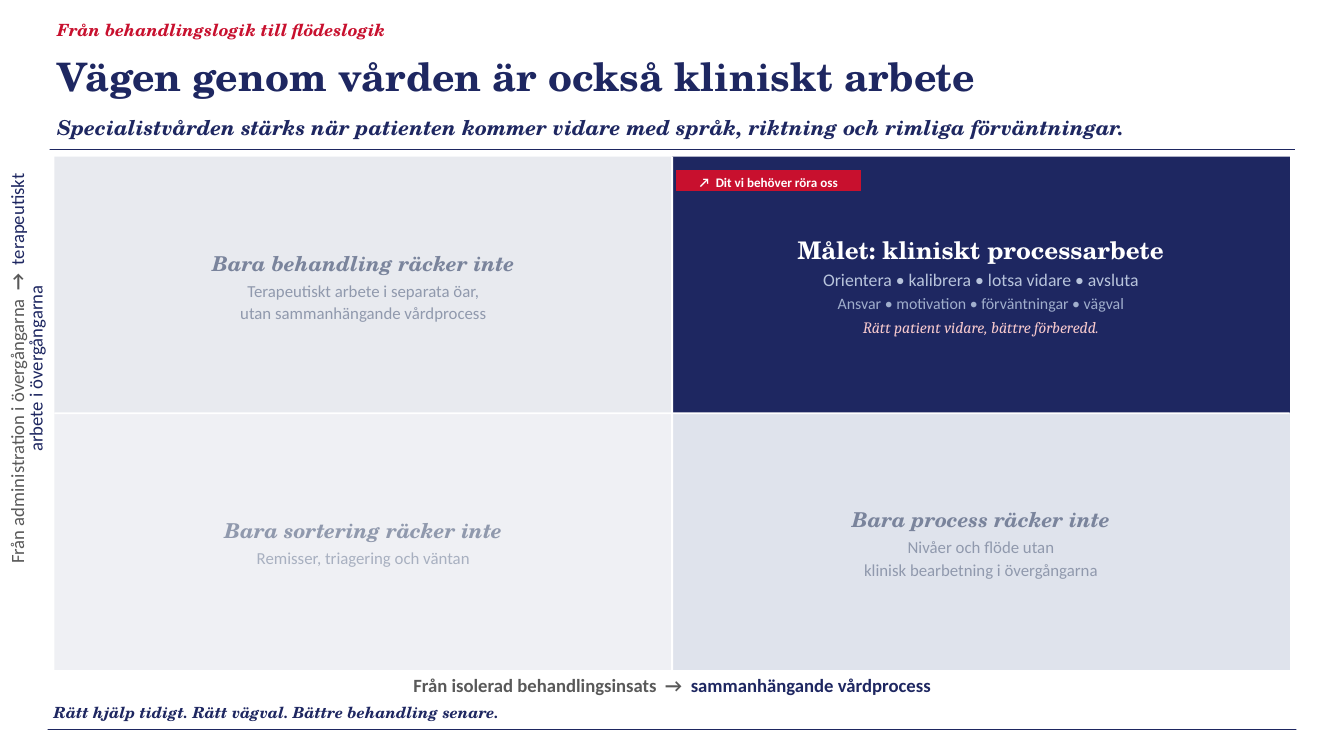
from pptx import Presentation
from pptx.dml.color import RGBColor
from pptx.enum.shapes import MSO_SHAPE
from pptx.enum.text import MSO_ANCHOR, MSO_AUTO_SIZE, PP_ALIGN
from pptx.util import Pt

RECTANGLE = MSO_SHAPE.RECTANGLE
TOP, MIDDLE = MSO_ANCHOR.TOP, MSO_ANCHOR.MIDDLE
LEFT, CENTER = PP_ALIGN.LEFT, PP_ALIGN.CENTER
SERIF, SANS, ACCENT_SERIF = "TeX Gyre Schola", "Calibri", "Cambria"

COLORS = {
    "navy": "1E2761", "red": "C8102E", "white": "FFFFFF", "gray": "595959",
    "quiet": "E8EAEF", "quietest": "EFF0F4", "cool": "DFE3EC",
    "slate": "7A849C", "slate light": "9099AD", "slate pale": "A8B0C0",
    "ice": "B8C4DC", "ice dim": "A0AECC", "rose": "F5C8CC",
}


def style(size, color, name=SANS, bold=False, italic=False):
    return {"size": Pt(size), "color": color, "name": name,
            "bold": bold, "italic": italic}


def line(text, text_style, spacing, before=0):
    return [(text, text_style)], spacing, before


def muted_quadrant(heading, body, heading_color, body_color):
    heading_style = style(22, heading_color, SERIF, True, True)
    return [line(heading, heading_style, 30)] + [
        line(text, style(18, body_color), 24, 0 if index else 3)
        for index, text in enumerate(body)]


# Content: headings as (left, top, width, height), line
TITLE = ((61.2, 56.2, 1318.3, 61.9),
         line("Vägen genom vården är också kliniskt arbete",
              style(42, "navy", SERIF, True), 50))
HEADINGS = [
    ((61.2, 22.3, 1318.3, 25.9),
     line("Från behandlingslogik till flödeslogik",
          style(18, "red", SERIF, True, True), 20)),
    ((61.2, 121.7, 1318.3, 33.8),
     line("Specialistvården stärks när patienten kommer vidare med språk, "
          "riktning och rimliga förväntningar.",
          style(22, "navy", SERIF, True, True), 28)),
    ((57.6, 753.8, 1296, 31.7),
     line("Rätt hjälp tidigt. Rätt vägval. Bättre behandling senare.",
          style(16.5, "navy", SERIF, True, True), 19.8)),
]
RULES = [(53.3, 159.9, 1334.2, 0.72), (51.1, 781.2, 1337.8, 0.72)]

# Quadrants: column, row, fill, lines
QUADRANTS = [
    (0, 0, "quiet", muted_quadrant(
        "Bara behandling räcker inte",
        ["Terapeutiskt arbete i separata öar,", "utan sammanhängande vårdprocess"],
        "slate", "slate light")),
    (0, 1, "quietest", muted_quadrant(
        "Bara sortering räcker inte", ["Remisser, triagering och väntan"],
        "slate light", "slate pale")),
    (1, 0, "navy", [
        line("Målet: kliniskt processarbete",
             style(26, "white", SERIF, True), 33.6),
        line("Orientera • kalibrera • lotsa vidare • avsluta",
             style(19, "ice"), 24, 3.6),
        line("Ansvar • motivation • förväntningar • vägval",
             style(17, "ice dim"), 22, 2),
        line("Rätt patient vidare, bättre förberedd.",
             style(17, "rose", ACCENT_SERIF, italic=True), 22, 3.6)]),
    (1, 1, "cool", muted_quadrant(
        "Bara process räcker inte",
        ["Nivåer och flöde utan", "klinisk bearbetning i övergångarna"],
        "slate", "slate light")),
]
BADGE = line("↗  Dit vi behöver röra oss", style(14, "white", bold=True), 19.8)
HORIZONTAL_AXIS = ([
    ("Från isolerad behandlingsinsats  →  ", style(20, "gray", bold=True)),
    ("sammanhängande vårdprocess", style(20, "navy", bold=True))], 19.8, 0)
VERTICAL_AXIS = ([
    ("Från administration i övergångarna", style(20, "gray")),
    ("  →  ", style(20, "gray", bold=True)),
    ("terapeutiskt arbete i övergångarna", style(20, "navy"))], 19.8, 0)

# Matrix geometry
MATRIX_LEFT, MATRIX_TOP = 58.3, 167.8
CELL_WIDTH, CELL_HEIGHT = 661.8, 275
PAD_X, PAD_Y, GAP = 22, 22, 2
BADGE_BOX = (724.3, 182.2, 198, 22.3)

presentation = Presentation()
presentation.slide_width, presentation.slide_height = Pt(1440), Pt(810)
slide = presentation.slides.add_slide(presentation.slide_layouts[5])


def add_rectangle(box, color):
    shape = slide.shapes.add_shape(RECTANGLE, *map(Pt, box))
    shape.shadow.inherit = False
    shape.fill.solid()
    shape.fill.fore_color.rgb = RGBColor.from_string(COLORS[color])
    shape.line.fill.background()


def fill_text(shape, lines, align=LEFT, anchor=TOP):
    frame = shape.text_frame
    frame_format = {"word_wrap": True, "auto_size": MSO_AUTO_SIZE.NONE,
                    "vertical_anchor": anchor, "margin_left": 0,
                    "margin_top": 0, "margin_right": 0, "margin_bottom": 0}
    for key, value in frame_format.items():
        setattr(frame, key, value)
    for index, (runs, spacing, before) in enumerate(lines):
        paragraph = frame.add_paragraph() if index else frame.paragraphs[0]
        paragraph_format = {"alignment": align, "line_spacing": Pt(spacing),
                            "space_before": Pt(before), "space_after": Pt(0)}
        for key, value in paragraph_format.items():
            setattr(paragraph, key, value)
        for text, text_style in runs:
            run = paragraph.add_run()
            run.text = text
            for key, value in text_style.items():
                if key == "color":
                    run.font.color.rgb = RGBColor.from_string(COLORS[value])
                else:
                    setattr(run.font, key, value)


def add_text(box, lines, align=LEFT, anchor=TOP):
    shape = slide.shapes.add_textbox(*map(Pt, box))
    fill_text(shape, lines, align, anchor)
    return shape


# Title, headings and rules
title = slide.shapes.title
title.left, title.top, title.width, title.height = map(Pt, TITLE[0])
fill_text(title, [TITLE[1]])
for box, heading in HEADINGS:
    add_text(box, [heading])
for box in RULES:
    add_rectangle(box, "navy")

# Quadrants
for column, row, fill, lines in QUADRANTS:
    left = MATRIX_LEFT + column * CELL_WIDTH
    top = MATRIX_TOP + row * CELL_HEIGHT
    add_rectangle((left, top, CELL_WIDTH, CELL_HEIGHT), fill)
    add_text((left + PAD_X, top + PAD_Y,
              CELL_WIDTH - 2 * PAD_X, CELL_HEIGHT - 2 * PAD_Y),
             lines, CENTER, MIDDLE)

# White gaps between the quadrants
add_rectangle((MATRIX_LEFT, MATRIX_TOP + CELL_HEIGHT - GAP / 2,
               2 * CELL_WIDTH, GAP), "white")
add_rectangle((MATRIX_LEFT + CELL_WIDTH - GAP / 2, MATRIX_TOP,
               GAP, 2 * CELL_HEIGHT), "white")

# Badge on the target quadrant
add_rectangle(BADGE_BOX, "red")
add_text(BADGE_BOX, [BADGE], CENTER, MIDDLE)

# Axis labels
add_text((MATRIX_LEFT, 725.8, 2 * CELL_WIDTH, 20.2), [HORIZONTAL_AXIS], CENTER)
vertical_label = add_text((-198, 365, 455.8, 59.8), [VERTICAL_AXIS],
                          CENTER, MIDDLE)
vertical_label.rotation = 270

presentation.save("out.pptx")
